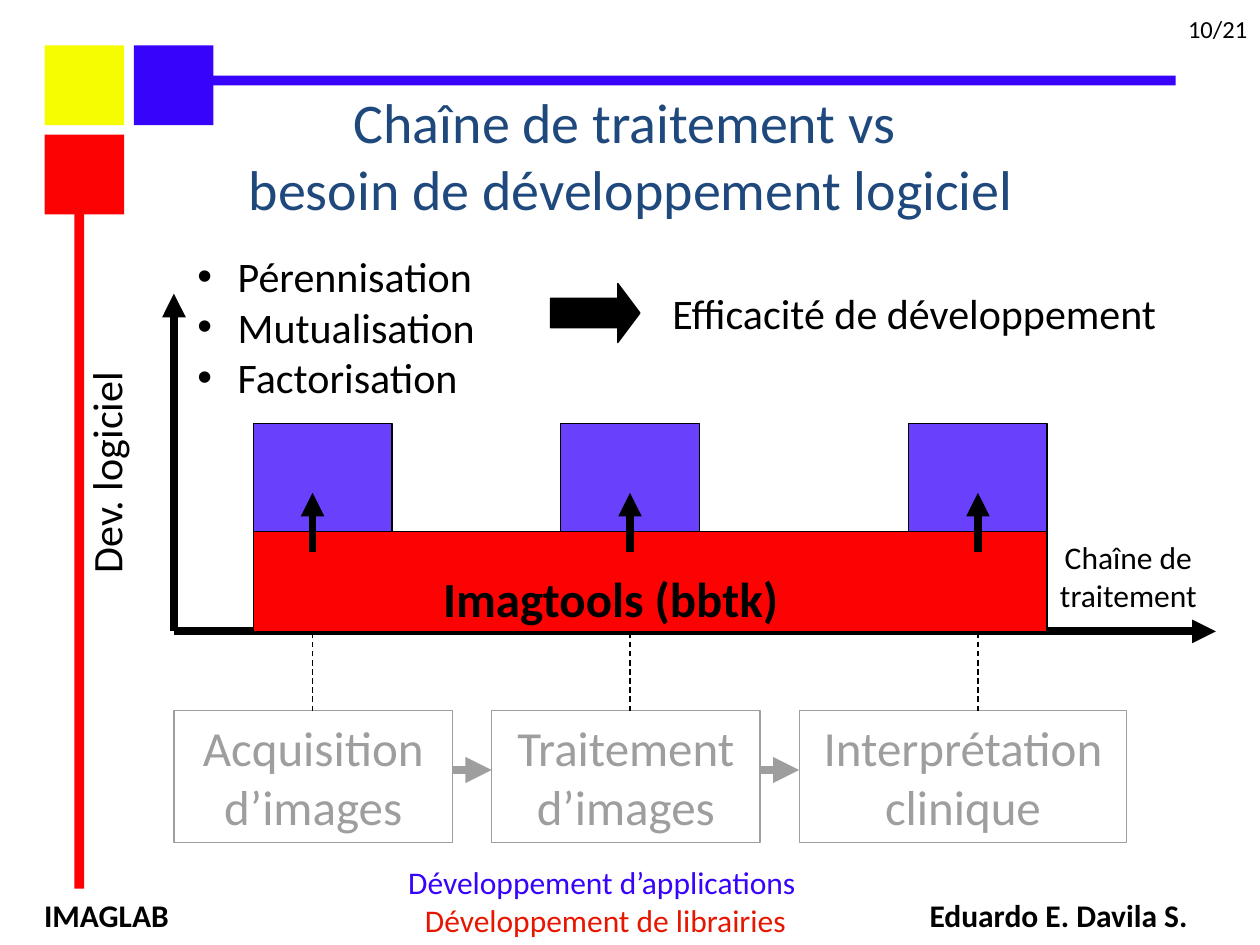
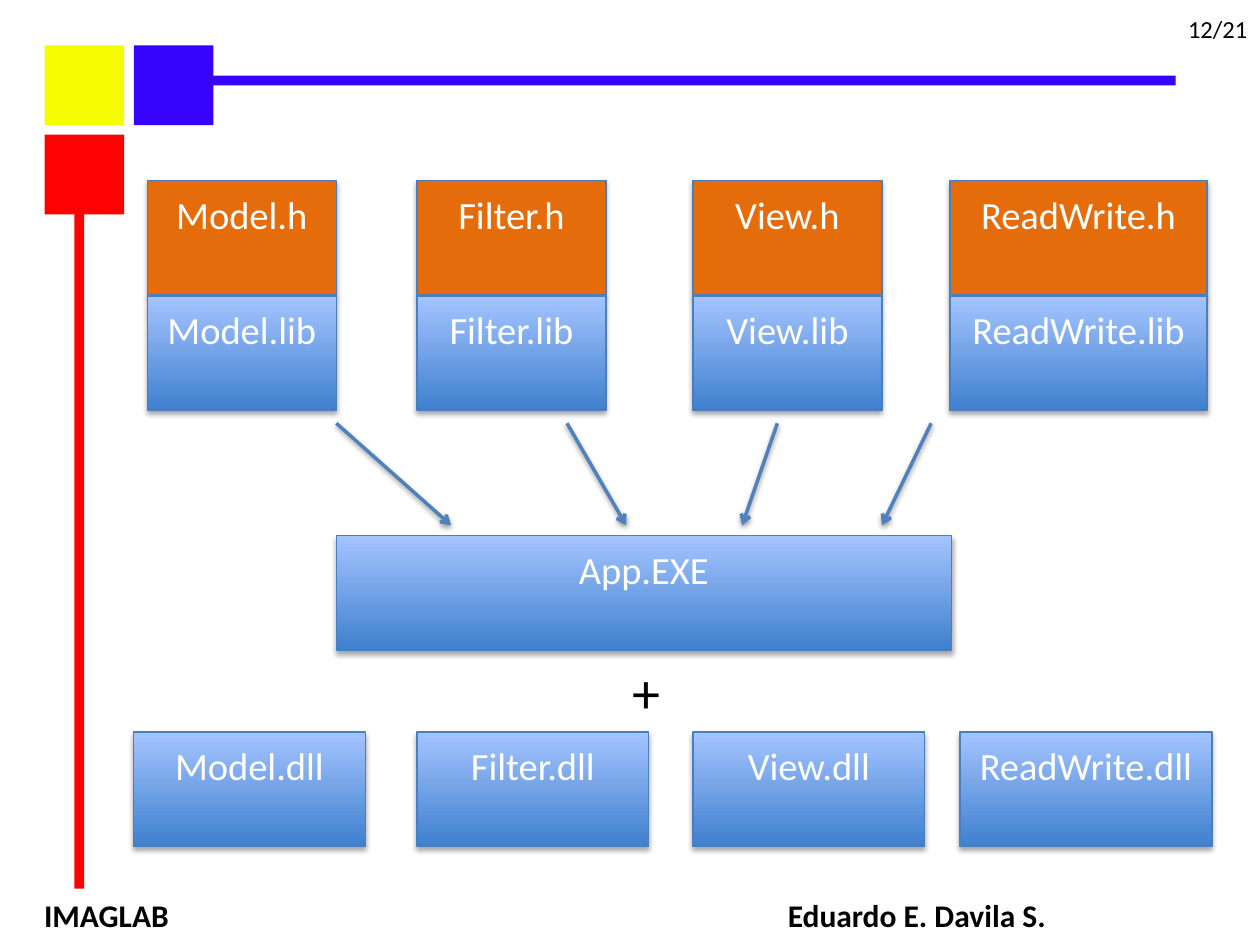
from dataclasses import dataclass

from lxml import etree
from pptx import Presentation
from pptx.dml.color import RGBColor
from pptx.enum import dml, shapes, text
from pptx.oxml import ns
from pptx.util import Pt

COLOURS = {
    "black": "000000", "white": "FFFFFF", "yellow": "F7FD01", "red": "FC0202",
    "blue": "3803FB", "violet": "6941FD", "title": "1F497D", "library": "E61600",
    "header": "E46C0A", "dark": "3F80CE", "light": "A4C4FF", "edge": "4B7EBC",
    "arrow": "4F81BD",
}
FONT = "Calibri"
CENTER = text.PP_ALIGN.CENTER
RECT = shapes.MSO_SHAPE.RECTANGLE


@dataclass
class Box:
    left: float
    top: float
    width: float
    height: float

    def inner(self, dx, dy, width, height):
        return Box(self.left + dx, self.top + dy, width, height)

    def lengths(self):
        return [Pt(v) for v in (self.left, self.top, self.width, self.height)]


# Helpers
def colour(name):
    return RGBColor.from_string(COLOURS[name])


def child(parent, tag, **attributes):
    element = etree.SubElement(parent, ns.qn(tag))
    for key, value in attributes.items():
        element.set(key, str(value))
    return element


def set_shadow(effects, opacity, distance):
    shadow = child(effects, "a:outerShdw", blurRad=Pt(3.1), dist=Pt(distance),
                   dir=90 * 60000, rotWithShape=0)
    black = child(shadow, "a:srgbClr", val=COLOURS["black"])
    child(black, "a:alpha", val=opacity * 1000)


def add_block(page, box, fill=None, line=None, kind=RECT):
    block = page.shapes.add_shape(kind, *box.lengths())
    block.shadow.inherit = False
    if fill:
        block.fill.solid()
        block.fill.fore_color.rgb = colour(fill)
    else:
        block.fill.background()
    if line:
        block.line.color.rgb = colour(line)
        block.line.width = Pt(0.75)
    else:
        block.line.fill.background()
    return block


def write(shape, words, size, name="black", align=CENTER, bold=False):
    frame = shape.text_frame
    frame.word_wrap = True
    para = frame.paragraphs[0]
    para.text = words
    style(para, size, name, align, bold)
    return frame


def style(para, size, name="black", align=CENTER, bold=False):
    para.alignment = align
    para.font.name = FONT
    para.font.size = Pt(size)
    para.font.bold = bold
    para.font.color.rgb = colour(name)


def add_text(page, box, words, size, **options):
    shape = page.shapes.add_textbox(*box.lengths())
    write(shape, words, size, **options)
    return shape


def add_line(page, start, end, width, name="black", head=None, dashed=False, shadow=False):
    points = [Pt(v) for v in (*start, *end)]
    line = page.shapes.add_connector(shapes.MSO_CONNECTOR.STRAIGHT, *points)
    line.line.color.rgb = colour(name)
    line.line.width = Pt(width)
    if dashed:
        line.line.dash_style = dml.MSO_LINE.DASH
    properties = line._element.spPr
    if head:
        child(properties.find(ns.qn("a:ln")), "a:tailEnd", type=head)
    effects = child(properties, "a:effectLst")
    if shadow:
        set_shadow(effects, 38, 1.6)


# Frame shared by all pages
def add_frame(page, box, number, author_tab):
    for dx, dy, width, height, name in (
        (25.5, 26, 45.5, 45.5, "yellow"),
        (25.5, 77, 45.5, 45.5, "red"),
        (76.5, 26, 45.5, 45.5, "blue"),
        (110, 43.2, 561.8, 5.6, "blue"),
        (42.5, 116.6, 5.6, 391.2, "red"),
    ):
        add_block(page, box.inner(dx, dy, width, height), name)

    footer = add_text(page, box.inner(14.4, 508.3, 705.6, 22.3),
                      "IMAGLAB\tEduardo E. Davila S.", 18, bold=True, align=text.PP_ALIGN.LEFT)
    footer.text_frame.margin_left = Pt(10.8)
    properties = footer.text_frame.paragraphs[0]._p.get_or_add_pPr()
    tabs = etree.Element(ns.qn("a:tabLst"))
    child(tabs, "a:tab", pos=Pt(author_tab), algn="l")
    properties.insert(0, tabs)

    add_text(page, box.inner(671.8, 4.3, 62.6, 23.8), number, 14, align=text.PP_ALIGN.LEFT)


# Processing steps under the plot, faded by a veil
def add_steps(page, box):
    gap, x, middle = 22.4, 0, 34
    steps = (("Acquisition d’images", 159.1), ("Traitement\nd’images", 153.4),
             ("Interprétation\nclinique", 187.2))
    for index, (words, width) in enumerate(steps):
        step = add_block(page, box.inner(x, 0, width, box.height), line="black")
        write(step, words, 28)
        if index:
            y = box.top + middle
            add_line(page, (box.left + x - gap, y), (box.left + x, y), 5, head="triangle")
        x += width + gap
    veil = add_block(page, box.inner(-5.8, -5.8, 595.4, 90.7), "white")
    shade = veil._element.spPr.find(ns.qn("a:solidFill"))[0]
    child(shade, "a:alpha", val=62000)


# Axes, application towers and library base
def add_plot(page, box):
    right, bottom = box.left + box.width, box.top + box.height
    origin = (box.left, bottom)
    add_line(page, origin, (box.left, box.top), 4.5, head="triangle")
    add_line(page, origin, (right, bottom), 4.5, head="triangle")
    add_text(page, box.inner(481.7, 136, 127.4, 50.4), "Chaîne de\ntraitement", 18)
    label = add_text(page, box.inner(-123.9, 84.2, 169.9, 36), "Dev. logiciel", 24)
    label.rotation = 270

    for x in (45.4, 221, 419.8):
        add_block(page, box.inner(x, 74.2, 79.2, 94), "violet", "black")
    add_block(page, box.inner(45.4, 136, 453.6, 57), "red", "black")
    add_text(page, box.inner(124.5, 153.4, 256.3, 41), "Imagtools (bbtk) ", 28, bold=True)
    for dx in (79.2, 260.6, 459.4):
        x = box.left + dx
        add_line(page, (x, bottom + 45.3), (x, bottom), 0.75, dashed=True)
        add_line(page, (x, box.top + 147.6), (x, box.top + 113.8), 4.5, head="triangle")


# Benefits list and its outcome
def add_benefits(page, box):
    benefits = page.shapes.add_textbox(*box.inner(0, 0, 232.6, box.height).lengths())
    frame = benefits.text_frame
    frame.word_wrap = True
    for index, words in enumerate(("Pérennisation", "Mutualisation", "Factorisation")):
        para = frame.add_paragraph() if index else frame.paragraphs[0]
        para.text = words
        style(para, 24, align=text.PP_ALIGN.LEFT)
        properties = para._p.get_or_add_pPr()
        properties.set("marL", str(Pt(41)))
        properties.set("indent", str(Pt(-23)))
        bullet = etree.Element(ns.qn("a:buChar"), char="•")
        font = etree.Element(ns.qn("a:buFont"), typeface="Arial")
        properties.insert(0, bullet)
        properties.insert(0, font)

    arrow = add_block(page, box.inner(226.8, 22.3, 51.1, 33.8), "black", "black",
                      shapes.MSO_SHAPE.RIGHT_ARROW)
    arrow.adjustments[0] = 0.5
    arrow.adjustments[1] = 0.375
    outcome = add_text(page, box.inner(289.4, 20.9, 316, 36), "Efficacité de développement",
                       24, align=text.PP_ALIGN.LEFT)
    outcome.text_frame.word_wrap = False


# Colour key
def add_key(page, box):
    key = page.shapes.add_textbox(*box.lengths())
    key.text_frame.word_wrap = True
    para = key.text_frame.paragraphs[0]
    style(para, 18)
    span = para.add_run()
    span.text = "Développement d’applications "
    span.font.color.rgb = colour("blue")
    para.add_line_break()
    span = para.add_run()
    span.text = "Développement de librairies"
    span.font.color.rgb = colour("library")


# Files on the build page
def add_file(page, box, name, header=False):
    block = add_block(page, box, "header" if header else None, "edge")
    if not header:
        block.fill.gradient()
        block.fill.gradient_angle = 90
        for stop, shade in zip(block.fill.gradient_stops, ("dark", "light")):
            stop.color.rgb = colour(shade)
    set_shadow(block._element.spPr.find(ns.qn("a:effectLst")), 35, 1.8)
    frame = write(block, name, 22, "white")
    frame.vertical_anchor = text.MSO_ANCHOR.TOP
    frame.margin_top = Pt(5.9)


def add_build(page, box):
    height = 65.5
    modules = (  # name, source left and width, dll left and width, arrow start and end
        ("Model", 7.9, 108, 0, 132.5, 115.9, 181.5),
        ("Filter", 162, 108, 162, 132.5, 247.7, 281.5),
        ("View", 319.7, 108, 319.7, 132.5, 367.9, 347.8),
        ("ReadWrite", 466.6, 146.9, 472.3, 144, 455.8, 427.7),
    )
    for name, left, width, dll_left, dll_width, start, end in modules:
        add_file(page, box.inner(left, 0, width, height), f"{name}.h", header=True)
        add_file(page, box.inner(left, 66.2, width, height), f"{name}.lib")
        add_file(page, box.inner(dll_left, 315.3, dll_width, height), f"{name}.dll")
        add_line(page, (box.left + start, box.top + 138.9), (box.left + end, box.top + 197.2),
                 2, "arrow", head="arrow", shadow=True)
    add_file(page, box.inner(115.9, 203, 351.4, height), "App.EXE")
    add_text(page, box.inner(277.9, 269.2, 66.2, 46), "+", 32, align=text.PP_ALIGN.LEFT)


# Pages
def add_chain_page(deck, area):
    page = deck.slides.add_slide(deck.slide_layouts[6])
    add_steps(page, area.inner(99.4, 406, 543.9, 75.6))
    add_frame(page, area, "10/21", 506)
    title = add_text(page, area.inner(36.7, 37.4, 648, 102.2),
                     "Chaîne de traitement vs \nbesoin de développement logiciel", 32, name="title")
    title.text_frame.vertical_anchor = text.MSO_ANCHOR.MIDDLE
    add_plot(page, area.inner(99.4, 167.8, 595.4, 193))
    add_key(page, area.inner(178.6, 489.6, 334.8, 50.4))
    add_benefits(page, area.inner(87.8, 139.7, 605.4, 93.6))


def add_build_page(deck, area):
    page = deck.slides.add_slide(deck.slide_layouts[6])
    add_frame(page, area, "12/21", 425)
    add_build(page, area.inner(76.3, 103, 616.3, 380.8))


def main():
    deck = Presentation()
    area = Box(0, 0, 720, 540)
    deck.slide_width, deck.slide_height = Pt(area.width), Pt(area.height)
    add_chain_page(deck, area)
    add_build_page(deck, area)
    deck.save("out.pptx")


if __name__ == "__main__":
    main()
